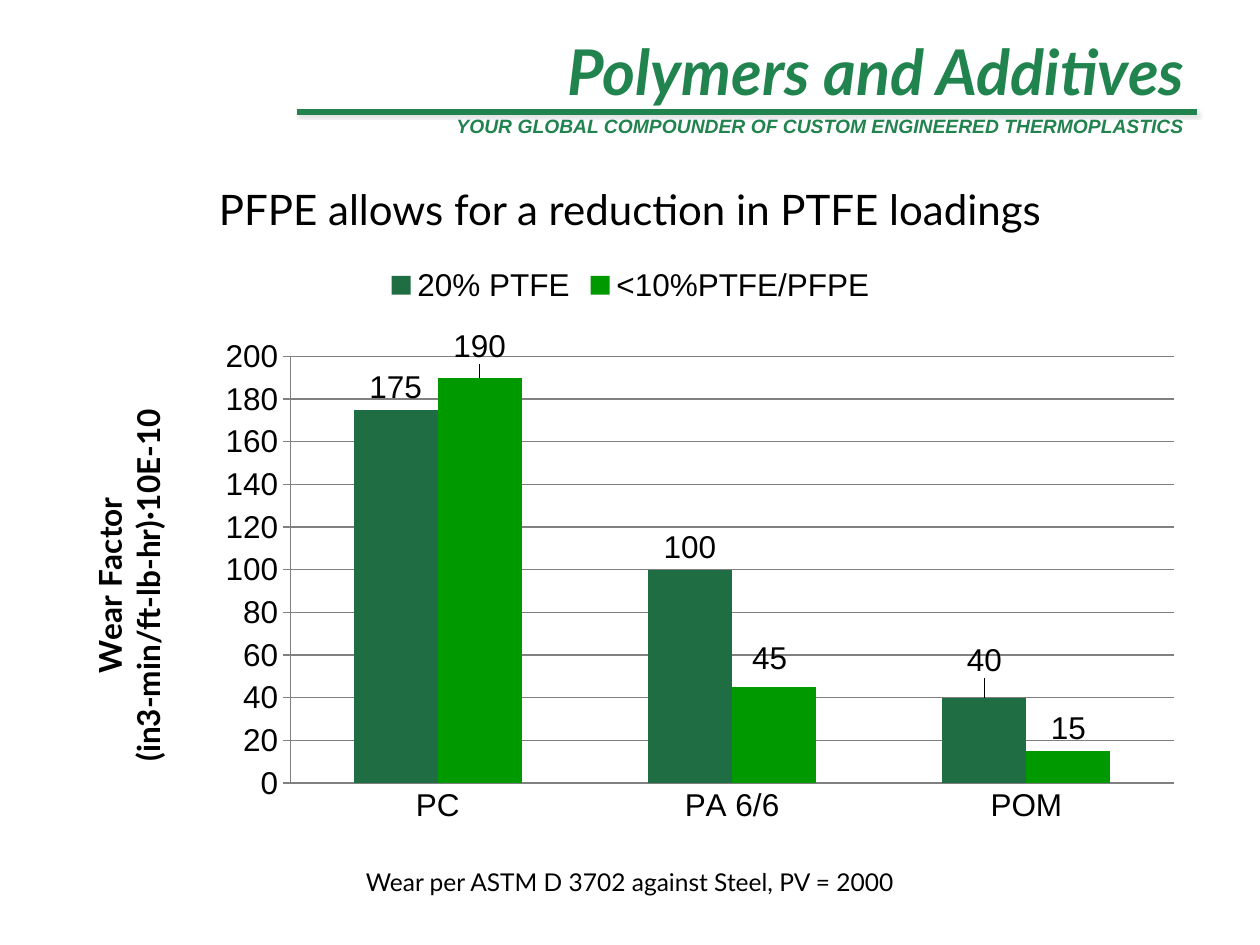
from dataclasses import dataclass

from lxml import etree
from pptx import Presentation
from pptx.chart.data import CategoryChartData
from pptx.dml.color import RGBColor
from pptx.enum.chart import XL_CHART_TYPE, XL_LABEL_POSITION, XL_LEGEND_POSITION, XL_TICK_MARK
from pptx.enum.shapes import MSO_CONNECTOR
from pptx.enum.text import MSO_ANCHOR, PP_ALIGN
from pptx.oxml import parse_xml
from pptx.oxml.ns import nsdecls, qn
from pptx.util import Inches, Pt

CENTER, RIGHT = PP_ALIGN.CENTER, PP_ALIGN.RIGHT
TOP, BOTTOM = MSO_ANCHOR.TOP, MSO_ANCHOR.BOTTOM
OUTSIDE_END = XL_LABEL_POSITION.OUTSIDE_END


@dataclass(frozen=True)
class Theme:
    brand: RGBColor = RGBColor(0x21, 0x83, 0x4E)
    black: RGBColor = RGBColor(0, 0, 0)
    grid: RGBColor = RGBColor(0x80, 0x80, 0x80)
    series: tuple = (RGBColor(0x1F, 0x6D, 0x42), RGBColor(0, 0x99, 0))
    heading_font: str = "Lato"
    body_font: str = "Arial"
    title: Pt = Pt(36)
    subtitle: Pt = Pt(24)
    chart: Pt = Pt(18)
    note: Pt = Pt(14)
    tagline: Pt = Pt(11)


theme = Theme()


def add_text(text, left, top, width, height, *, size, font=theme.heading_font,
             color=theme.black, align=CENTER, anchor=TOP, emphasis=False):
    frame = slide.shapes.add_textbox(
        Inches(left), Inches(top), Inches(width), Inches(height)).text_frame
    frame.word_wrap = True
    frame.vertical_anchor = anchor
    paragraph = frame.paragraphs[0]
    paragraph.alignment = align
    run = paragraph.add_run()
    run.text = text
    run.font.name, run.font.size, run.font.color.rgb = font, size, color
    run.font.bold = run.font.italic = emphasis


def manual_layout(**values):
    """Return a c:layout element holding the given manual layout values."""
    layout = parse_xml(f"<c:layout {nsdecls('c')}><c:manualLayout/></c:layout>")
    for name, value in values.items():
        etree.SubElement(layout[0], qn(f"c:{name}")).set("val", str(value))
    return layout


presentation = Presentation()
presentation.slide_width, presentation.slide_height = Inches(10), Inches(7.5)
slide = presentation.slides.add_slide(presentation.slide_layouts[6])

# Header: a plain rule with a shadowed one over it, then the texts
shadow = ('<a:outerShdw blurRad="25400" dist="12700" dir="2700000">'
          '<a:srgbClr val="808080"><a:alpha val="25000"/></a:srgbClr></a:outerShdw>')
header_left, header_width, rule_top = 2.36, 7.14, 0.89
for effect in ("", shadow):
    rule = slide.shapes.add_connector(
        MSO_CONNECTOR.STRAIGHT, Inches(header_left), Inches(rule_top),
        Inches(header_left + header_width), Inches(rule_top))
    rule.line.color.rgb = theme.brand
    rule.line.width = Pt(3)
    rule._element.spPr.append(
        parse_xml(f"<a:effectLst {nsdecls('a')}>{effect}</a:effectLst>"))

add_text("YOUR GLOBAL COMPOUNDER OF CUSTOM ENGINEERED THERMOPLASTICS",
         header_left, 0.86, header_width, 0.29, size=theme.tagline,
         font=theme.body_font, color=theme.brand, align=RIGHT, emphasis=True)
add_text("Polymers and Additives", header_left, 0.08, header_width, 0.83,
         size=theme.title, color=theme.brand, align=RIGHT, anchor=BOTTOM, emphasis=True)
add_text("PFPE allows for a reduction in PTFE loadings", 0, 1.41, 10, 0.5,
         size=theme.subtitle)

# Wear chart
chart_data = CategoryChartData()
chart_data.categories = ["PC", "PA 6/6", "POM"]
chart_data.add_series("20% PTFE", (175, 100, 40))
chart_data.add_series("<10%PTFE/PFPE", (190, 45, 15))
chart = slide.shapes.add_chart(
    XL_CHART_TYPE.COLUMN_CLUSTERED, Inches(0.58), Inches(2), Inches(8.85), Inches(4.68),
    chart_data).chart
chart.has_title = False
chart.font.name, chart.font.size = theme.body_font, theme.chart
chart.font.color.rgb = theme.black
chart.has_legend = True
chart.legend.position = XL_LEGEND_POSITION.TOP
chart.legend.include_in_layout = False

plot_area = chart._chartSpace.chart.plotArea
for old_layout in plot_area.findall(qn("c:layout")):
    plot_area.remove(old_layout)
plot_area.insert(0, manual_layout(layoutTarget="inner", xMode="edge", yMode="edge",
                                  x=0.195, y=0.177, w=0.792, h=0.724))

category_axis, value_axis = chart.category_axis, chart.value_axis
category_axis.major_tick_mark = XL_TICK_MARK.NONE
value_axis.major_tick_mark = XL_TICK_MARK.OUTSIDE
value_axis.minimum_scale, value_axis.maximum_scale, value_axis.major_unit = 0, 200, 20
value_axis.has_major_gridlines = True
for line in (category_axis.format.line, value_axis.format.line,
             value_axis.major_gridlines.format.line):
    line.color.rgb = theme.grid
    line.width = Pt(0.75)

axis_title = value_axis.axis_title
axis_title.text_frame.text = "Wear Factor\n(in3-min/ft-lb-hr)∙10E-10"
for paragraph in axis_title.text_frame.paragraphs:
    paragraph.alignment = CENTER
    for run in paragraph.runs:
        run.font.name, run.font.size = theme.heading_font, theme.chart
        run.font.bold = True
        run.font.color.rgb = theme.black
title_element = axis_title._element
for old_layout in title_element.findall(qn("c:layout")):
    title_element.remove(old_layout)
title_element.find(qn("c:tx")).addnext(
    manual_layout(xMode="edge", yMode="edge", x=0.01, y=0.26))

plot = chart.plots[0]
plot.gap_width, plot.overlap = 150, 0
plot.vary_by_categories = False
label_shifts = ({2: (0, -0.025)}, {0: (0, -0.014), 1: (-0.004, -0.01)})
for series, color, shifts in zip(plot.series, theme.series, label_shifts):
    series.format.fill.solid()
    series.format.fill.fore_color.rgb = color
    labels = series.data_labels
    labels.show_value = True
    labels.position = OUTSIDE_END
    for index, (x, y) in shifts.items():
        series.points[index].data_label.position = OUTSIDE_END
        label = labels._element.find(f"{qn('c:dLbl')}[{qn('c:idx')}]"
                                     ) if len(shifts) == 1 else labels._element.findall(
                                         qn("c:dLbl"))[index]
        label.find(qn("c:idx")).addnext(manual_layout(x=x, y=y))

add_text("Wear per ASTM D 3702 against Steel, PV = 2000", 0, 6.83, 10, 0.34,
         size=theme.note)

presentation.save("out.pptx")
